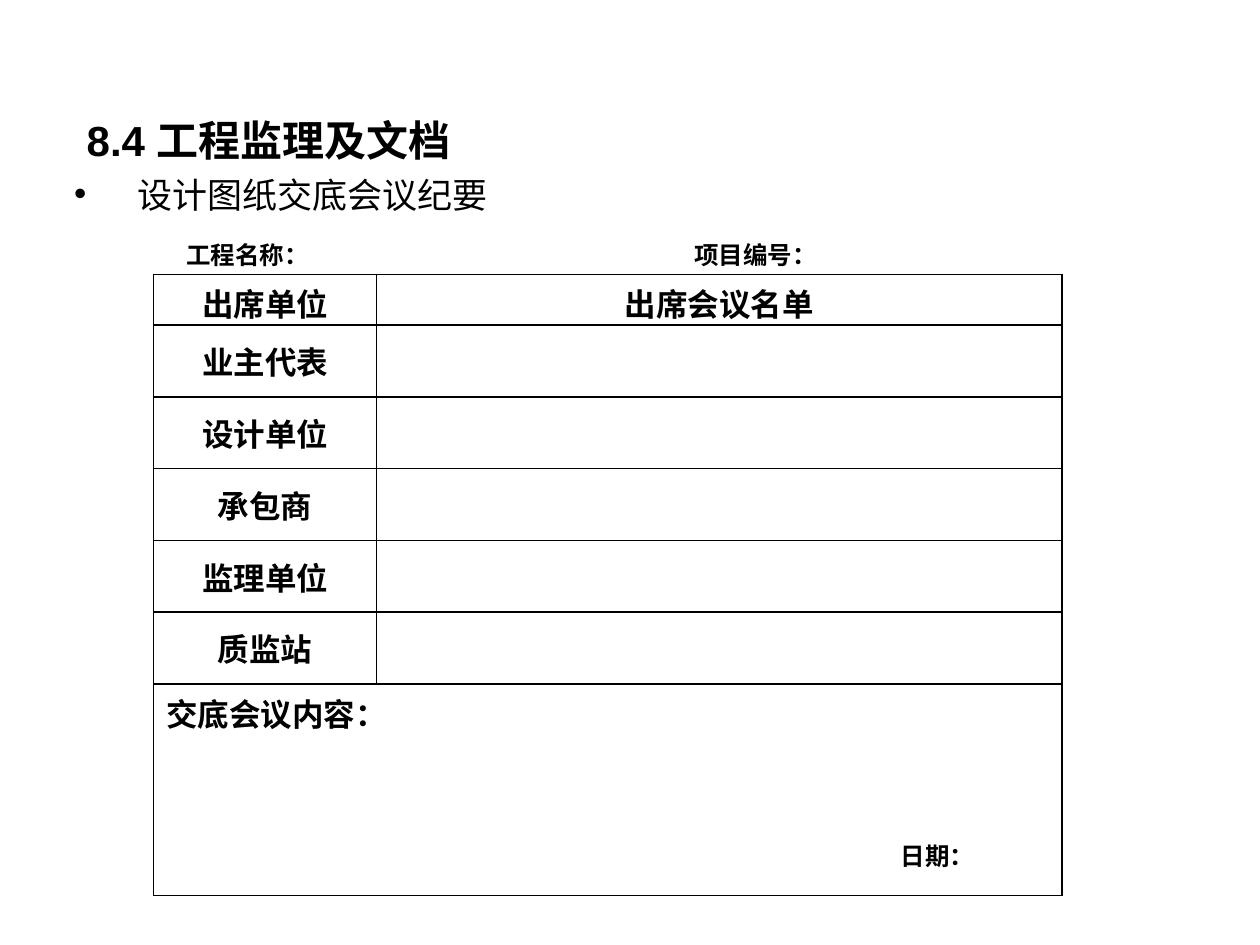
from lxml.etree import SubElement
from pptx import Presentation
from pptx.dml.color import RGBColor
from pptx.enum.text import MSO_ANCHOR, PP_ALIGN
from pptx.oxml.ns import qn
from pptx.util import Inches, Pt

COLORS = {"ink": "000000", "paper": "FFFFFF"}
EAST_ASIAN_FONT = "Noto Sans CJK SC"
FORMATS = {
    "title": {"name": "Arial", "size": Pt(24), "bold": True},
    "subtitle": {"name": EAST_ASIAN_FONT, "size": Pt(20), "bold": False},
    "label": {"name": "Times New Roman", "size": Pt(14), "bold": True},
    "cell": {"name": "Times New Roman", "size": Pt(18), "bold": True},
}

TITLE = "8.4 工程监理及文档"
SUBTITLE = "设计图纸交底会议纪要"
PROJECT_LABELS = ["工程名称：", "项目编号："]
HEADERS = ["出席单位", "出席会议名单"]
ATTENDEES = ["业主代表", "设计单位", "承包商", "监理单位", "质监站"]
CONTENT_LABEL = "交底会议内容："
DATE_LABEL = "日期："

TABLE_LEFT, TABLE_TOP = 1.22, 2.18
COLUMN_WIDTHS = [1.77, 5.44]
ROW_HEIGHTS = [0.4] + [0.57] * len(ATTENDEES) + [1.68]
LABEL_TAB = 4.03


def write(paragraph, text, style):
    run = paragraph.add_run()
    run.text = text
    for attribute, value in FORMATS[style].items():
        setattr(run.font, attribute, value)
    run.font.color.rgb = RGBColor.from_string(COLORS["ink"])
    SubElement(run._r.get_or_add_rPr(), qn("a:ea"), typeface=EAST_ASIAN_FONT)


def add_text_box(slide, box, anchor, wrap=True):
    """Add an empty text box and return its first paragraph."""
    frame = slide.shapes.add_textbox(*map(Inches, box)).text_frame
    frame.word_wrap = wrap
    frame.vertical_anchor = anchor
    return frame.paragraphs[0]


def add_bullet(paragraph, indent):
    properties = paragraph._p.get_or_add_pPr()
    properties.set("marL", str(Inches(indent)))
    properties.set("indent", str(-Inches(indent)))
    SubElement(properties, qn("a:buFont"), typeface="Arial")
    SubElement(properties, qn("a:buChar"), char="•")


def add_tab(paragraph, position):
    tabs = SubElement(paragraph._p.get_or_add_pPr(), qn("a:tabLst"))
    SubElement(tabs, qn("a:tab"), pos=str(Inches(position)), algn="l")


def style_cell(cell):
    """Give a cell thin borders on all sides and a plain fill."""
    properties = cell._tc.get_or_add_tcPr()
    for side in ("lnL", "lnR", "lnT", "lnB"):
        line = SubElement(properties, qn(f"a:{side}"), w=str(Pt(1)))
        fill = SubElement(line, qn("a:solidFill"))
        SubElement(fill, qn("a:srgbClr"), val=COLORS["ink"])
    cell.fill.solid()
    cell.fill.fore_color.rgb = RGBColor.from_string(COLORS["paper"])


def add_minutes_table(slide):
    rows = [HEADERS] + [[name, ""] for name in ATTENDEES] + [[CONTENT_LABEL, ""]]
    frame = slide.shapes.add_table(
        len(rows), len(COLUMN_WIDTHS), Inches(TABLE_LEFT), Inches(TABLE_TOP),
        Inches(sum(COLUMN_WIDTHS)), Inches(sum(ROW_HEIGHTS)))
    table = frame.table
    table.first_row = table.horz_banding = False
    for column, width in zip(table.columns, COLUMN_WIDTHS):
        column.width = Inches(width)
    for row, height in zip(table.rows, ROW_HEIGHTS):
        row.height = Inches(height)

    last = len(rows) - 1
    table.cell(last, 0).merge(table.cell(last, 1))
    for row_index, texts in enumerate(rows):
        for column_index, text in enumerate(texts):
            cell = table.cell(row_index, column_index)
            style_cell(cell)
            if row_index == 0:
                cell.margin_top, cell.margin_bottom = Inches(0.04), 0
            if not text:
                continue
            paragraph = cell.text_frame.paragraphs[0]
            if row_index < last:
                cell.vertical_anchor = MSO_ANCHOR.MIDDLE
                paragraph.alignment = PP_ALIGN.CENTER
            write(paragraph, text, "cell")


def main():
    presentation = Presentation()
    presentation.slide_width, presentation.slide_height = Inches(10), Inches(7.5)
    slide = presentation.slides.add_slide(presentation.slide_layouts[6])

    title = add_text_box(slide, (0.59, 0.91, 7.87, 0.39), MSO_ANCHOR.MIDDLE)
    write(title, TITLE, "title")

    subtitle = add_text_box(slide, (0.49, 1.39, 4.2, 0.33), MSO_ANCHOR.TOP)
    subtitle.line_spacing = 0.8
    add_bullet(subtitle, 0.5)
    write(subtitle, SUBTITLE, "subtitle")

    labels = add_text_box(slide, (1.38, 1.86, 6.85, 0.33), MSO_ANCHOR.MIDDLE)
    add_tab(labels, LABEL_TAB)
    write(labels, "\t".join(PROJECT_LABELS), "label")

    add_minutes_table(slide)

    date = add_text_box(slide, (7.05, 6.63, 0.82, 0.33), MSO_ANCHOR.MIDDLE, wrap=False)
    write(date, DATE_LABEL, "label")

    presentation.save("out.pptx")


if __name__ == "__main__":
    main()
